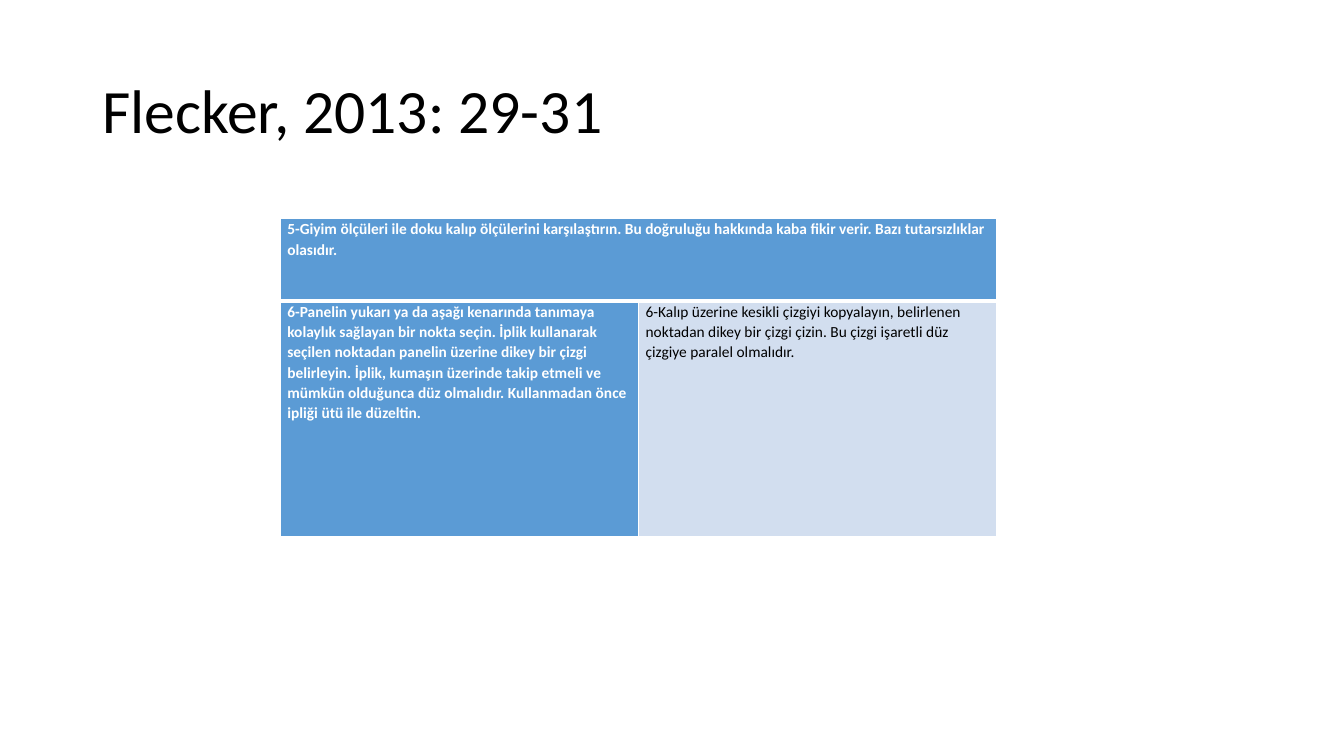
from lxml import etree
from pptx import Presentation
from pptx.dml.color import RGBColor
from pptx.enum.text import MSO_ANCHOR, PP_ALIGN
from pptx.oxml.ns import qn
from pptx.util import Cm, Pt

MIDDLE = MSO_ANCHOR.MIDDLE
TOP = MSO_ANCHOR.TOP
LEFT = PP_ALIGN.LEFT

BLACK = RGBColor(0x00, 0x00, 0x00)
WHITE = RGBColor(0xFF, 0xFF, 0xFF)
BLUE = RGBColor(0x5B, 0x9B, 0xD5)
PALE_BLUE = RGBColor(0xD2, 0xDE, 0xEF)

TITLE_FONT = {"name": "Calibri", "size": Pt(44), "bold": False}
HEADING_FONT = {"name": "Calibri", "size": Pt(11), "bold": True}
BODY_FONT = {"name": "Calibri", "size": Pt(11), "bold": False}
CELL_FORMAT = {
    "margin_left": Cm(0.18),
    "margin_right": Cm(0.18),
    "margin_top": Cm(0),
    "margin_bottom": Cm(0),
    "vertical_anchor": TOP,
}

COLUMN_WIDTHS = [Cm(9.03), Cm(9.03)]
ROW_HEIGHTS = [Cm(2.08), Cm(5.94)]
THIN, THICK = Pt(1), Pt(3)
ROW_BORDERS = [
    {"a:lnL": THIN, "a:lnR": THIN, "a:lnT": THIN, "a:lnB": THICK},
    {"a:lnL": THIN, "a:lnR": THIN, "a:lnT": THICK, "a:lnB": THIN},
]

COMPARE_STEP = (
    "5-Giyim ölçüleri ile doku kalıp ölçülerini karşılaştırın. Bu doğruluğu "
    "hakkında kaba fikir verir. Bazı tutarsızlıklar olasıdır."
)
PANEL_STEP = (
    "6-Panelin yukarı ya da aşağı kenarında tanımaya kolaylık sağlayan bir nokta "
    "seçin. İplik kullanarak seçilen noktadan panelin üzerine dikey bir çizgi "
    "belirleyin. İplik, kumaşın üzerinde takip etmeli ve mümkün olduğunca düz "
    "olmalıdır. Kullanmadan önce ipliği ütü ile düzeltin."
)
PATTERN_STEP = (
    "6-Kalıp üzerine kesikli çizgiyi kopyalayın, belirlenen noktadan dikey bir "
    "çizgi çizin. Bu çizgi işaretli düz çizgiye paralel olmalıdır."
)


def apply_format(target, values):
    """Set each named attribute on the target."""
    for name, value in values.items():
        setattr(target, name, value)


def write_text(text_frame, text, font_format, color, line_spacing):
    """Write one formatted paragraph into a text frame."""
    text_frame.word_wrap = True
    paragraph = text_frame.paragraphs[0]
    apply_format(paragraph, {"alignment": LEFT, "line_spacing": line_spacing})
    run = paragraph.add_run()
    run.text = text
    apply_format(run.font, font_format)
    run.font.color.rgb = color


def add_title(slide, text):
    """Add the slide title as a vertically centred text box."""
    shape = slide.shapes.add_textbox(Cm(2.33), Cm(1.01), Cm(29.21), Cm(3.68))
    shape.text_frame.vertical_anchor = MIDDLE
    write_text(shape.text_frame, text, TITLE_FONT, BLACK, 0.9)


def set_borders(cell, widths):
    """Draw white borders of the given widths around a cell."""
    properties = cell._tc.get_or_add_tcPr()
    for tag, width in widths.items():
        line = etree.SubElement(properties, qn(tag), w=str(int(width)))
        fill = etree.SubElement(line, qn("a:solidFill"))
        etree.SubElement(fill, qn("a:srgbClr"), val=str(WHITE))


def fill_cell(cell, text, font_format, color, background):
    """Give a cell its text, margins and background."""
    apply_format(cell, CELL_FORMAT)
    cell.fill.solid()
    cell.fill.fore_color.rgb = background
    write_text(cell.text_frame, text, font_format, color, 1.07)


def add_steps_table(slide):
    """Add the table of pattern steps with a merged top row."""
    frame = slide.shapes.add_table(
        len(ROW_HEIGHTS), len(COLUMN_WIDTHS), Cm(7.06), Cm(5.51),
        sum(COLUMN_WIDTHS), sum(ROW_HEIGHTS),
    )
    table = frame.table
    apply_format(table, {"first_row": False, "horz_banding": False})
    for column, width in zip(table.columns, COLUMN_WIDTHS):
        column.width = width
    for row, height, borders in zip(table.rows, ROW_HEIGHTS, ROW_BORDERS):
        row.height = height
        for cell in row.cells:
            set_borders(cell, borders)
    table.cell(0, 0).merge(table.cell(0, 1))
    fill_cell(table.cell(0, 0), COMPARE_STEP, HEADING_FONT, WHITE, BLUE)
    fill_cell(table.cell(1, 0), PANEL_STEP, HEADING_FONT, WHITE, BLUE)
    fill_cell(table.cell(1, 1), PATTERN_STEP, BODY_FONT, BLACK, PALE_BLUE)


def main():
    """Build the slide and save it."""
    presentation = Presentation()
    apply_format(presentation, {"slide_width": Cm(33.87), "slide_height": Cm(19.05)})
    slide = presentation.slides.add_slide(presentation.slide_layouts[6])
    add_title(slide, "Flecker, 2013: 29-31")
    add_steps_table(slide)
    presentation.save("out.pptx")


if __name__ == "__main__":
    main()
